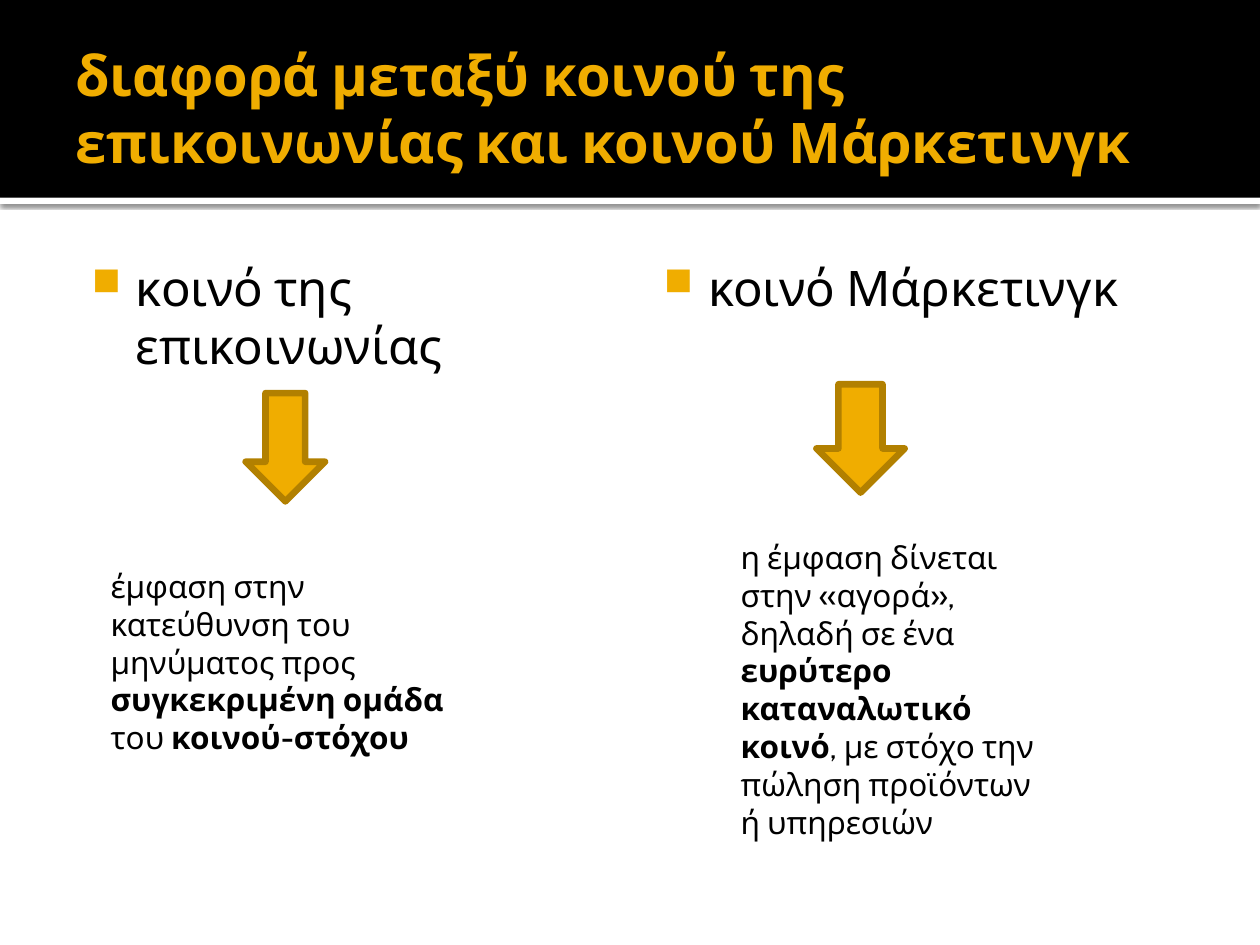
from dataclasses import dataclass

from lxml import etree
from pptx import Presentation
from pptx.dml.color import RGBColor
from pptx.enum.shapes import MSO_SHAPE
from pptx.enum.text import MSO_ANCHOR
from pptx.oxml.ns import qn
from pptx.util import Pt

RECTANGLE = MSO_SHAPE.RECTANGLE
DOWN_ARROW = MSO_SHAPE.DOWN_ARROW
TOP = MSO_ANCHOR.TOP
MIDDLE = MSO_ANCHOR.MIDDLE


@dataclass(frozen=True)
class Theme:
    font: str = "Cabin"
    black: str = "000000"
    white: str = "FFFFFF"
    accent: str = "F0AD00"
    accent_dark: str = "B28000"
    title_size: float = 32
    heading_size: float = 28
    note_size: float = 18


def add_xml(parent, tag, **attributes):
    return etree.SubElement(parent, qn(tag), attributes)


def write_runs(paragraph, runs, font, size, color, bold=False):
    """Write the runs in turn; each (text, bold) pair sets its own weight."""
    for item in runs:
        text, run_bold = item if isinstance(item, tuple) else (item, bold)
        run = paragraph.add_run()
        run.text = text
        run.font.name = font
        run.font.size = Pt(size)
        run.font.bold = run_bold
        run.font.color.rgb = RGBColor.from_string(color)


class SlideBuilder:
    def __init__(self, slide, theme):
        self.slide = slide
        self.theme = theme

    def shape(self, kind, box, fill, line=None, line_width=0):
        shape = self.slide.shapes.add_shape(kind, *map(Pt, box))
        shape.fill.solid()
        shape.fill.fore_color.rgb = RGBColor.from_string(fill)
        if line:
            shape.line.color.rgb = RGBColor.from_string(line)
            shape.line.width = Pt(line_width)
        else:
            shape.line.fill.background()
        shape.shadow.inherit = False
        return shape

    def shadow(self, shape, blur, distance, opacity):
        effects = shape._element.spPr.find(qn("a:effectLst"))
        outer = add_xml(effects, "a:outerShdw", blurRad=str(Pt(blur)),
                        dist=str(Pt(distance)), dir="5400000",
                        algn="t", rotWithShape="0")
        color = add_xml(outer, "a:srgbClr", val=self.theme.black)
        add_xml(color, "a:alpha", val=str(opacity * 1000))

    def text(self, box, runs, size, color, bold=False, anchor=TOP,
             insets=(7.2, 3.6, 7.2, 3.6)):
        frame = self.slide.shapes.add_textbox(*map(Pt, box)).text_frame
        frame.word_wrap = True
        frame.vertical_anchor = anchor
        (frame.margin_left, frame.margin_top,
         frame.margin_right, frame.margin_bottom) = map(Pt, insets)
        paragraph = frame.paragraphs[0]
        write_runs(paragraph, runs, font=self.theme.font, size=size,
                   color=color, bold=bold)
        return paragraph

    def bullet_heading(self, box, text, left_inset):
        paragraph = self.text(box, [text], self.theme.heading_size,
                              self.theme.black,
                              insets=(left_inset, 7.2, 7.2, 3.6))
        properties = paragraph._p.get_or_add_pPr()
        properties.set("marL", str(Pt(34.56)))
        properties.set("indent", str(Pt(-25.2)))
        color = add_xml(properties, "a:buClr")
        add_xml(color, "a:srgbClr", val=self.theme.accent)
        add_xml(properties, "a:buSzPct", val="80000")
        add_xml(properties, "a:buChar", char="■")

    def arrow(self, box):
        self.shape(DOWN_ARROW, box, self.theme.accent,
                   line=self.theme.accent_dark, line_width=3.78)


def main():
    presentation = Presentation()
    presentation.slide_width = Pt(720)
    presentation.slide_height = Pt(540)
    slide = presentation.slides.add_slide(presentation.slide_layouts[6])
    theme = Theme()
    builder = SlideBuilder(slide, theme)

    # Title band with a shadowed white edge
    edge = builder.shape(RECTANGLE, (0, 113, 720, 3.6), theme.white)
    builder.shadow(edge, blur=2.5, distance=0.8, opacity=60)
    builder.shape(RECTANGLE, (0, 0, 720, 113), theme.black)
    builder.text((36, 12.24, 648, 98.64),
                 ["διαφορά μεταξύ κοινού της επικοινωνίας και κοινού Μάρκετινγκ"],
                 theme.title_size, theme.accent, bold=True, anchor=MIDDLE,
                 insets=(7.2, 3.6, 3.6, 3.6))

    # Column headings
    for left, heading, left_inset in [
        (36, "κοινό της επικοινωνίας", 7.2),
        (365.76, "κοινό Μάρκετινγκ", 4.32),
    ]:
        builder.bullet_heading((left, 139.68, 318.24, 364.32), heading, left_inset)

    # Arrows and the explanations below them
    for arrow_box, note_box, runs in [
        ((140.4, 224.64, 45.36, 61.92), (56.16, 320.4, 225.36, 94.32),
         ["έμφαση στην κατεύθυνση του μηνύματος προς ",
          ("συγκεκριμένη ομάδα ", True), "του ", ("κοινού-στόχου", True)]),
        ((466.56, 219.6, 50.4, 61.92), (416.16, 303.84, 185.76, 181.44),
         ["η έμφαση δίνεται στην «αγορά», δηλαδή σε ένα ",
          ("ευρύτερο καταναλωτικό κοινό", True),
          ", με στόχο την πώληση προϊόντων ή υπηρεσιών"]),
    ]:
        builder.arrow(arrow_box)
        builder.text(note_box, runs, theme.note_size, theme.black)

    presentation.save("out.pptx")


if __name__ == "__main__":
    main()
